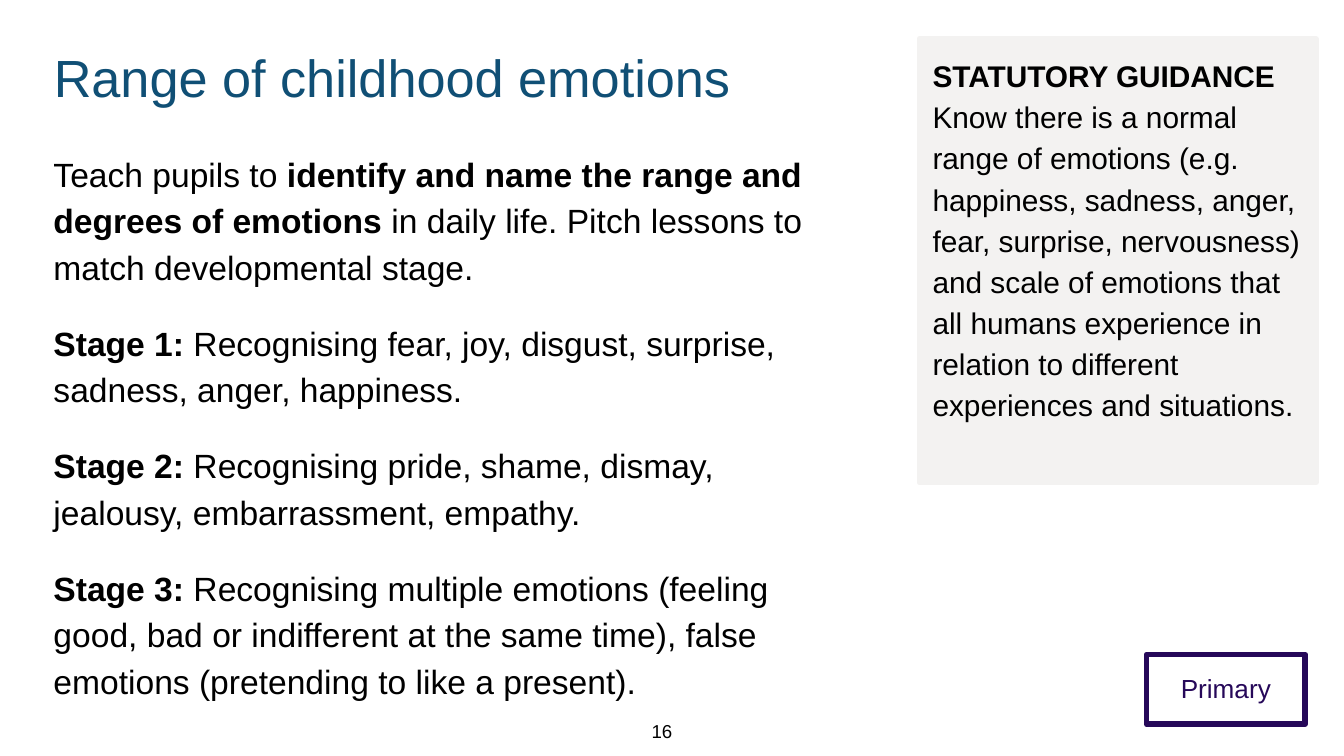
from pptx import Presentation
from pptx.dml.color import RGBColor
from pptx.enum.shapes import MSO_SHAPE
from pptx.enum.text import MSO_ANCHOR, MSO_AUTO_SIZE, PP_ALIGN
from pptx.util import Pt

FONT = "Arial"
BLUE = RGBColor(0x10, 0x4F, 0x75)
PURPLE = RGBColor(0x26, 0x08, 0x59)
BLACK = RGBColor(0, 0, 0)
GREY = RGBColor(0xF3, 0xF2, 0xF1)
INSET = Pt(7.2)
LINE_SPACING = 1.15

TEACHING = [
    [("Teach pupils to ", False),
     ("identify and name the range and degrees of emotions", True),
     (" in daily life. Pitch lessons to match developmental stage.", False)],
    [("Stage 1:", True),
     (" Recognising fear, joy, disgust, surprise, sadness, anger, happiness.", False)],
    [("Stage 2:", True),
     (" Recognising pride, shame, dismay, jealousy, embarrassment, empathy.", False)],
    [("Stage 3:", True),
     (" Recognising multiple emotions (feeling good, bad or indifferent at the "
      "same time), false emotions (pretending to like a present).", False)],
]
GUIDANCE = [
    [("STATUTORY GUIDANCE", True)],
    [("Know there is a normal range of emotions (e.g. happiness, sadness, anger, "
      "fear, surprise, nervousness) and scale of emotions that all humans "
      "experience in relation to different experiences and situations.", False)],
]


def prepare_frame(shape, anchor=MSO_ANCHOR.TOP):
    frame = shape.text_frame
    frame.word_wrap = True
    frame.auto_size = MSO_AUTO_SIZE.NONE
    frame.vertical_anchor = anchor
    frame.margin_left = frame.margin_right = INSET
    frame.margin_top = frame.margin_bottom = INSET
    return frame


def write_paragraphs(frame, paragraphs, size, color=BLACK, align=PP_ALIGN.LEFT,
                     gap=0, spacing=LINE_SPACING):
    """Fill the frame with paragraphs, each a list of (text, bold) spans."""
    for index, spans in enumerate(paragraphs):
        para = frame.add_paragraph() if index else frame.paragraphs[0]
        para.alignment = align
        para.line_spacing = spacing
        para.space_before = Pt(gap if index else 0)
        for text, bold in spans:
            span = para.add_run()
            span.text = text
            span.font.name = FONT
            span.font.size = Pt(size)
            span.font.bold = bold
            span.font.color.rgb = color


def add_panel(page, box, line_color, fill_color=None):
    panel = page.shapes.add_shape(MSO_SHAPE.RECTANGLE, *map(Pt, box))
    panel.shadow.inherit = False
    if fill_color is None:
        panel.fill.background()
    else:
        panel.fill.solid()
        panel.fill.fore_color.rgb = fill_color
    panel.line.color.rgb = line_color
    panel.line.width = Pt(3)
    return panel


def place_title(page, box):
    title = page.shapes.title
    title.left, title.top, title.width, title.height = map(Pt, box)
    write_paragraphs(prepare_frame(title), [[("Range of childhood emotions", False)]],
                     28, BLUE, spacing=1)


def add_phase_label(page, box):
    label = add_panel(page, box, PURPLE)
    write_paragraphs(prepare_frame(label), [[("Primary", False)]],
                     14, PURPLE, PP_ALIGN.CENTER)


def add_teaching(page, box):
    teaching = page.shapes.add_textbox(*map(Pt, box))
    write_paragraphs(prepare_frame(teaching), TEACHING, 18, gap=16)


def add_guidance(page, box):
    guidance = add_panel(page, box, GREY, GREY)
    write_paragraphs(prepare_frame(guidance), GUIDANCE, 16)


def add_page_number(page, box):
    number = page.shapes.add_textbox(*map(Pt, box))
    write_paragraphs(prepare_frame(number, MSO_ANCHOR.MIDDLE), [[("16", False)]],
                     10, align=PP_ALIGN.RIGHT, spacing=1)


def main():
    deck = Presentation()
    deck.slide_width, deck.slide_height = Pt(720), Pt(405)
    page = deck.slides.add_slide(deck.slide_layouts.get_by_name("Title Only"))
    place_title(page, (21.6, 17.3, 461.5, 45.4))
    add_phase_label(page, (614.2, 350.6, 85, 37.4))
    add_teaching(page, (21.6, 72, 424, 296.6))
    add_guidance(page, (492.5, 20.9, 212.4, 237.6))
    add_page_number(page, (339.8, 378.7, 27.4, 26.3))
    deck.save("out.pptx")


if __name__ == "__main__":
    main()
